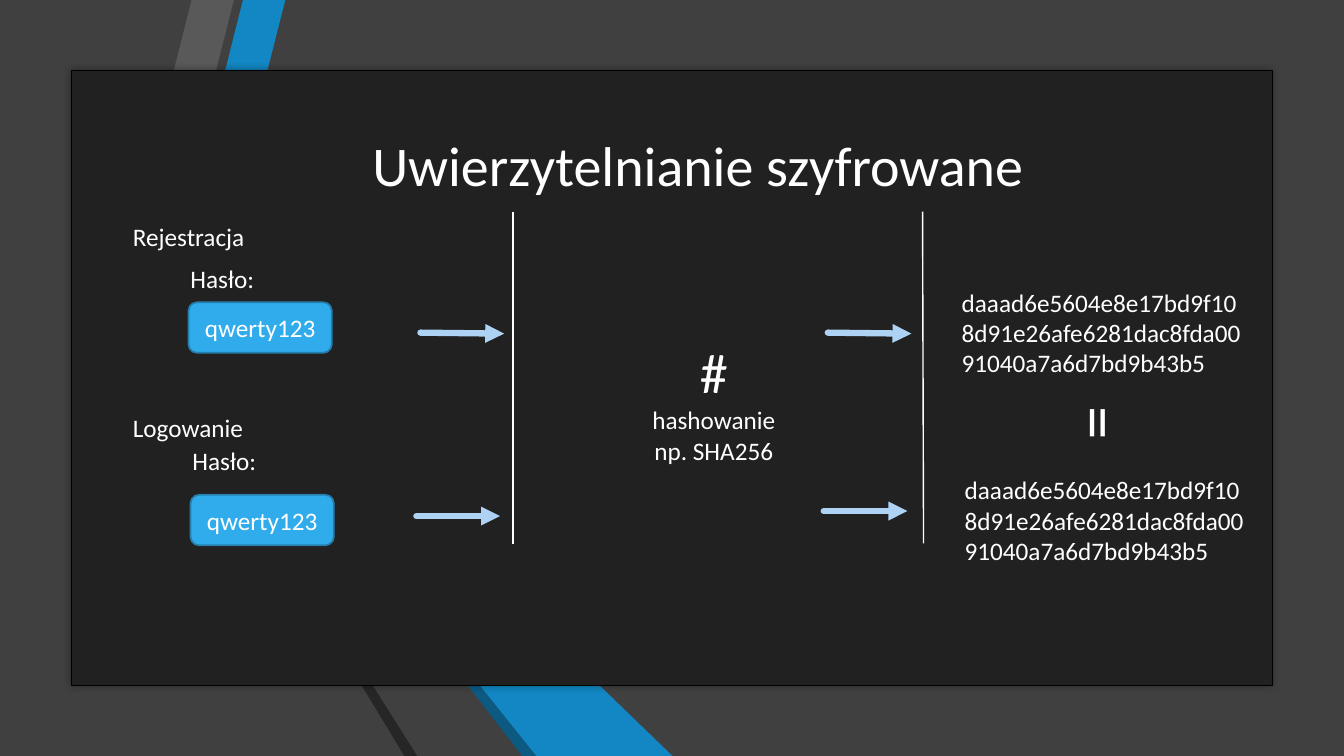
from dataclasses import dataclass

from lxml.etree import SubElement
from pptx import Presentation
from pptx.dml.color import RGBColor
from pptx.enum.shapes import MSO_CONNECTOR as Line, MSO_SHAPE as Shape
from pptx.enum.text import MSO_ANCHOR as Anchor, MSO_AUTO_SIZE as Fit, PP_ALIGN as Align
from pptx.oxml.ns import qn
from pptx.util import Inches, Pt


@dataclass(frozen=True)
class Theme:
    font: str = "Calibri"
    text: str = "FFFFFF"
    back: str = "404040"
    panel: str = "212121"
    edge: str = "000000"
    grey: str = "595959"
    dark: str = "262626"
    blue: str = "1287C3"
    navy: str = "0C5A82"
    field: str = "30ACEC"
    rim: str = "247FAF"
    arrow: str = "AED2F4"
    body: int = 18
    title: int = 40
    sign: int = 48


THEME = Theme()
HASH = "daaad6e5604e8e17bd9f108d91e26afe6281dac8fda0091040a7a6d7bd9b43b5"
RIBBONS = [
    (THEME.blue, [(1.67, 2.94), (2.06, 3.04), (2.83, 0), (2.41, 0)]),
    (THEME.grey, [(1.58, 2.92), (2.32, 0), (1.9, 0), (1.19, 2.82)]),
    (THEME.dark, [(1.19, 2.83), (4.01, 7.5), (4.14, 7.5)]),
    (THEME.navy, [(5.32, 7.5), (1.67, 2.95), (5.18, 7.5)]),
    (THEME.blue, [(1.67, 2.94), (5.32, 7.5), (6.67, 7.5), (2.06, 3.04)]),
    (THEME.back, [(5.11, 7.5), (1.65, 3.02), (1.58, 2.92), (1.19, 2.82), (4.14, 7.5)]),
]


def rgb(code):
    return RGBColor.from_string(code)


def paint(shape, fill, rim=None, width=1):
    shape.shadow.inherit = False
    shape.fill.solid()
    shape.fill.fore_color.rgb = rgb(fill)
    if rim:
        shape.line.color.rgb = rgb(rim)
        shape.line.width = Pt(width)
    else:
        shape.line.fill.background()


def write(frame, text, sizes, align=Align.LEFT):
    """Fill a frame, taking one size per paragraph."""
    frame.word_wrap = True
    frame.text = text
    for para, size in zip(frame.paragraphs, sizes):
        para.alignment = align
        for run in para.runs:
            run.font.name = THEME.font
            run.font.size = Pt(size)
            run.font.color.rgb = rgb(THEME.text)


def add_box(slide, kind, x, y, w, h, fill, rim=None, width=1):
    box = slide.shapes.add_shape(kind, Inches(x), Inches(y), Inches(w), Inches(h))
    paint(box, fill, rim, width)
    return box


def add_ribbon(slide, fill, points):
    spots = [(Inches(x), Inches(y)) for x, y in points]
    form = slide.shapes.build_freeform(*spots[0])
    form.add_line_segments(spots[1:], close=True)
    paint(form.convert_to_shape(), fill)


def add_glow(shape):
    """Give the panel a soft, even shadow."""
    effects = shape._element.spPr.find(qn("a:effectLst"))
    shade = SubElement(effects, qn("a:outerShdw"), blurRad=str(Pt(5)), dist="0", dir="0")
    tone = SubElement(shade, qn("a:srgbClr"), val=THEME.edge)
    SubElement(tone, qn("a:alpha"), val="40000")


def add_line(slide, x1, y1, x2, y2, color, width):
    line = slide.shapes.add_connector(
        Line.STRAIGHT, Inches(x1), Inches(y1), Inches(x2), Inches(y2))
    line.line.color.rgb = rgb(color)
    line.line.width = Pt(width)
    SubElement(line._element.spPr, qn("a:effectLst"))
    return line


def add_arrow(slide, x, y, drop=0):
    line = add_line(slide, x, y, x + 0.83, y + drop, THEME.arrow, 4.5)
    ln = line.line._get_or_add_ln()
    ln.set("cap", "rnd")
    SubElement(ln, qn("a:tailEnd"), type="triangle")


def add_text(slide, text, x, y, w, h, sizes=(THEME.body,), align=Align.LEFT):
    box = slide.shapes.add_textbox(Inches(x), Inches(y), Inches(w), Inches(h))
    write(box.text_frame, text, sizes, align)
    box.text_frame.auto_size = Fit.SHAPE_TO_FIT_TEXT
    return box


def add_field(slide, x, y):
    box = add_box(slide, Shape.ROUNDED_RECTANGLE, x, y, 1.42, 0.5,
                  THEME.field, THEME.rim, 1.25)
    write(box.text_frame, "qwerty123", [THEME.body], Align.CENTER)
    box.text_frame.vertical_anchor = Anchor.MIDDLE


def add_title(slide, text):
    title = slide.shapes.title
    title.left, title.top = Inches(1.44), Inches(0.09)
    title.width, title.height = Inches(10.96), Inches(1.92)
    write(title.text_frame, text, [THEME.title], Align.CENTER)
    title.text_frame.vertical_anchor = Anchor.BOTTOM
    title.text_frame.auto_size = Fit.NONE


def add_decor(slide):
    fill = slide.background.fill
    fill.solid()
    fill.fore_color.rgb = rgb(THEME.panel)
    add_box(slide, Shape.RECTANGLE, 0, 0, 13.33, 7.5, THEME.back)
    for color, points in RIBBONS:
        add_ribbon(slide, color, points)
    add_glow(add_box(slide, Shape.RECTANGLE, 0.71, 0.7, 11.91, 6.1,
                     THEME.panel, THEME.edge, 0.25))


def main():
    deck = Presentation()
    deck.slide_width, deck.slide_height = Inches(13.33), Inches(7.5)
    slide = deck.slides.add_slide(deck.slide_layouts[5])
    add_decor(slide)
    # The title comes first in the tree, so lift it above the panel.
    slide.shapes._spTree.append(slide.shapes.title._element)
    add_title(slide, "Uwierzytelnianie szyfrowane")

    add_line(slide, 5.09, 2.1, 5.09, 5.4, THEME.text, 1.25)
    add_line(slide, 9.15, 2.1, 9.16, 5.39, THEME.text, 1)

    for head, top, label, box in [
        ("Rejestracja", 2.15, (1.79, 2.56), (1.87, 3)),
        ("Logowanie", 4.04, (1.81, 4.37), (1.89, 4.91)),
    ]:
        add_text(slide, head, 1.22, top, 3, 0.4)
        add_text(slide, "Hasło:", *label, 3, 0.4)
        add_field(slide, *box)

    for x, y, drop in [(4.17, 3.3, 0.01), (8.21, 3.3, 0.01), (4.13, 5.12, 0), (8.17, 5.07, 0)]:
        add_arrow(slide, x, y, drop)

    add_text(slide, "#\nhashowanie\nnp. SHA256", 5.58, 3.3, 3, 1.38,
             (THEME.title, THEME.body, THEME.body), Align.CENTER)
    for x, y in [(9.44, 2.8), (9.47, 4.66)]:
        add_text(slide, HASH, x, y, 3, 1.01)
    equal = add_text(slide, "=", 10.6, 3.81, 0.67, 0.91, [THEME.sign])
    equal.rotation = 90

    deck.save("out.pptx")


if __name__ == "__main__":
    main()
